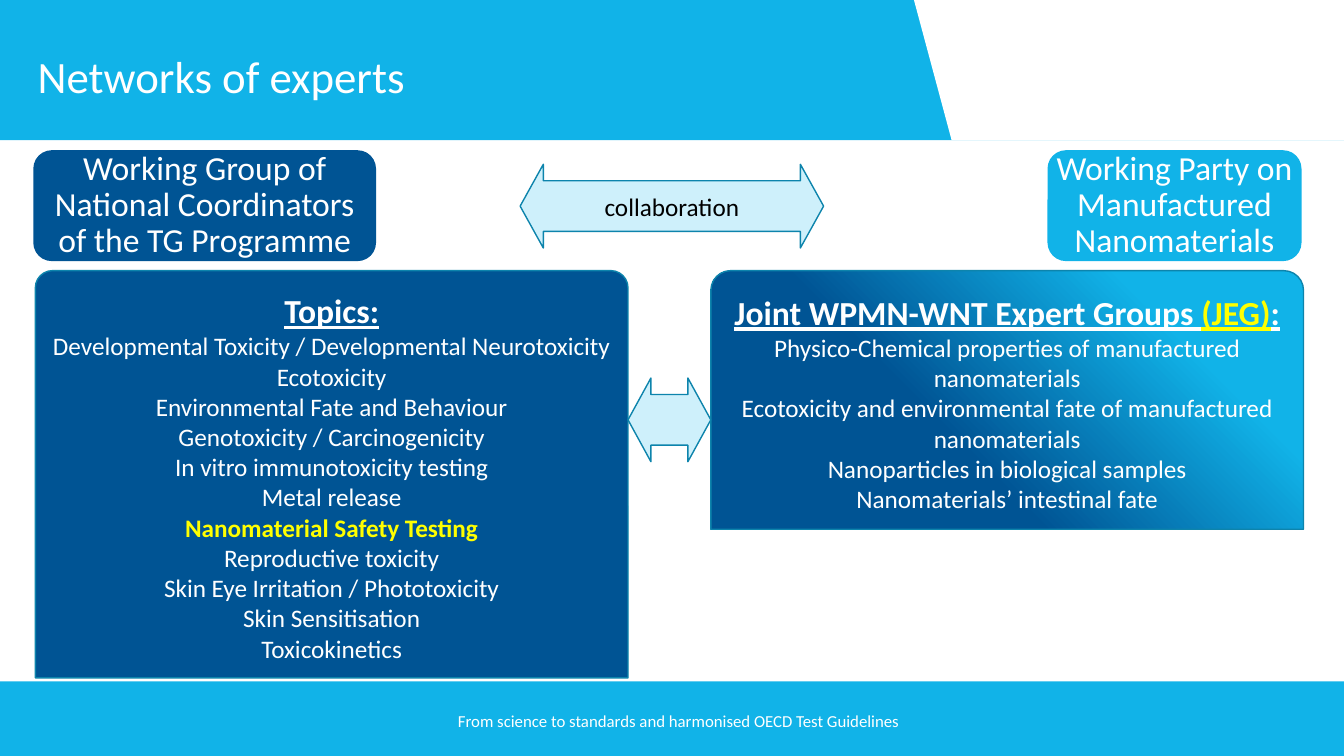
from pptx import Presentation
from pptx import util as u
from pptx.dml.color import RGBColor
from pptx.enum import shapes, text

SKY = RGBColor(0x11, 0xB3, 0xE8)
NAVY = RGBColor(0x00, 0x54, 0x94)
PALE = RGBColor(0xCE, 0xF0, 0xFB)
EDGE = RGBColor(0x0D, 0x84, 0xAC)
WHITE = RGBColor(0xFF, 0xFF, 0xFF)
BLACK = RGBColor(0, 0, 0)
YELLOW = RGBColor(0xFF, 0xFF, 0)

WIDE, HIGH = u.Inches(13.33), u.Inches(7.5)
KIND = shapes.MSO_SHAPE
PANEL_W, ARROW_H = 44.1, 11.07
LEFT, RIGHT = 2.63, 52.89

TOPICS = [
    "Developmental Toxicity / Developmental Neurotoxicity",
    "Ecotoxicity",
    "Environmental Fate and Behaviour",
    "Genotoxicity / Carcinogenicity",
    "In vitro immunotoxicity testing",
    "Metal release",
    "Nanomaterial Safety Testing",
    "Reproductive toxicity",
    "Skin Eye Irritation / Phototoxicity",
    "Skin Sensitisation",
    "Toxicokinetics",
]
GROUPS = [
    "Physico-Chemical properties of manufactured nanomaterials",
    "Ecotoxicity and environmental fate of manufactured nanomaterials",
    "Nanoparticles in biological samples",
    "Nanomaterials’ intestinal fate",
]
KEY_TOPIC = "Nanomaterial Safety Testing"


def scale(box):
    """Turn percentages of the slide into lengths."""
    return [round(part * side / 100)
            for part, side in zip(box, (WIDE, HIGH, WIDE, HIGH))]


def paint(shape, fill, edge=None):
    shape.shadow.inherit = False
    shape.fill.solid()
    shape.fill.fore_color.rgb = fill
    if edge is None:
        shape.line.fill.background()
    else:
        shape.line.color.rgb = edge
        shape.line.width = u.Pt(1)
    return shape


def add_part(slide, kind, box, fill, edge=None):
    return paint(slide.shapes.add_shape(kind, *scale(box)), fill, edge)


def set_frame(shape, side=0.04):
    frame = shape.text_frame
    frame.word_wrap = True
    frame.auto_size = text.MSO_AUTO_SIZE.NONE
    frame.vertical_anchor = text.MSO_ANCHOR.MIDDLE
    frame.margin_left = frame.margin_right = u.Inches(side)
    frame.margin_top = frame.margin_bottom = u.Inches(0.02)
    return frame


def add_run(para, words, size, color=WHITE, bold=False, under=False):
    run = para.add_run()
    run.text = words
    font = run.font
    font.name, font.size = "Calibri", u.Pt(size)
    font.bold, font.underline = bold, under
    font.color.rgb = color


def center(para):
    para.alignment = text.PP_ALIGN.CENTER
    return para


def add_head(slide, box):
    left, top, width, height = scale(box)
    add_part(slide, KIND.RECTANGLE, box, SKY)
    end, base = left + width, top + height
    form = slide.shapes.build_freeform(left + round(width * 0.68), top)
    form.add_line_segments(
        [(end, top), (end, base), (left + round(width * 0.708), base)])
    paint(form.convert_to_shape(), WHITE)

    title = slide.shapes.title
    title.left, title.top = left + round(width * 0.025), top + round(height * 0.15)
    title.width, title.height = round(width * 0.65), round(height * 0.78)
    para = set_frame(title).paragraphs[0]
    para.alignment = text.PP_ALIGN.LEFT
    add_run(para, "Networks of experts", 32)
    slide.shapes._spTree.append(title._element)  # bring in front of the band


def add_foot(slide, box):
    add_part(slide, KIND.RECTANGLE, box, SKY)
    left, top, width, height = box
    inner = (left + width * 0.15, top + height * 0.26, width * 0.71, height * 0.54)
    note = slide.shapes.add_textbox(*scale(inner))
    add_run(center(set_frame(note).paragraphs[0]),
            "From science to standards and harmonised OECD Test Guidelines", 12)


def add_body(slide, box, name, fill):
    shape = add_part(slide, KIND.ROUNDED_RECTANGLE, box, fill)
    para = center(set_frame(shape, 0.02).paragraphs[0])
    para.line_spacing = 0.9
    add_run(para, name, 24)


def add_panel(slide, box, bend, heading, items):
    shape = add_part(slide, KIND.ROUND_2_SAME_RECTANGLE, box, NAVY, EDGE)
    shape.adjustments[0], shape.adjustments[1] = bend, 0
    frame = set_frame(shape)
    para = center(frame.paragraphs[0])
    for words, color in heading:
        add_run(para, words, 24, color, bold=True, under=True)
    for item in items:
        key = item == KEY_TOPIC
        add_run(center(frame.add_paragraph()), item, 18,
                YELLOW if key else WHITE, bold=key)
    return shape


def shade(shape):
    """Blend the two networks' colours from the top right corner."""
    shape.fill.gradient()
    shape.fill.gradient_angle = 225
    stops = zip(shape.fill.gradient_stops, (0.22, 0.61), (SKY, NAVY))
    for stop, place, color in stops:
        stop.position = place
        stop.color.rgb = color


def add_arrow(slide, box, label=""):
    arrow = add_part(slide, KIND.LEFT_RIGHT_ARROW, box, PALE, EDGE)
    arrow.adjustments[0], arrow.adjustments[1] = 0.605, 0.277
    if label:
        add_run(center(set_frame(arrow, 0.1).paragraphs[0]), label, 18, BLACK)


def main():
    deck = Presentation()
    deck.slide_width, deck.slide_height = WIDE, HIGH
    slide = deck.slides.add_slide(deck.slide_layouts.get_by_name("Title Only"))

    add_head(slide, (0, 0, 100, 18.53))
    add_foot(slide, (0, 90.13, 100, 9.87))
    add_panel(slide, (LEFT, 35.8, PANEL_W, 53.87), 0.042,
              [("Topics:", WHITE)], TOPICS)
    add_body(slide, (2.48, 19.87, 25.5, 14.67),
             "Working Group of National Coordinators of the TG Programme", NAVY)
    add_body(slide, (77.94, 19.87, 18.9, 14.67),
             "Working Party on Manufactured Nanomaterials", SKY)
    joint = add_panel(slide, (RIGHT, 35.8, PANEL_W, 34.2), 0.076,
                      [("Joint WPMN-WNT Expert Groups ", WHITE),
                       ("(JEG)", YELLOW), (":", WHITE)], GROUPS)
    shade(joint)
    add_arrow(slide, (38.7, 21.73, 22.58, ARROW_H), "collaboration")
    gap = LEFT + PANEL_W
    add_arrow(slide, (gap, 50, RIGHT - gap, ARROW_H))

    deck.save("out.pptx")


if __name__ == "__main__":
    main()
